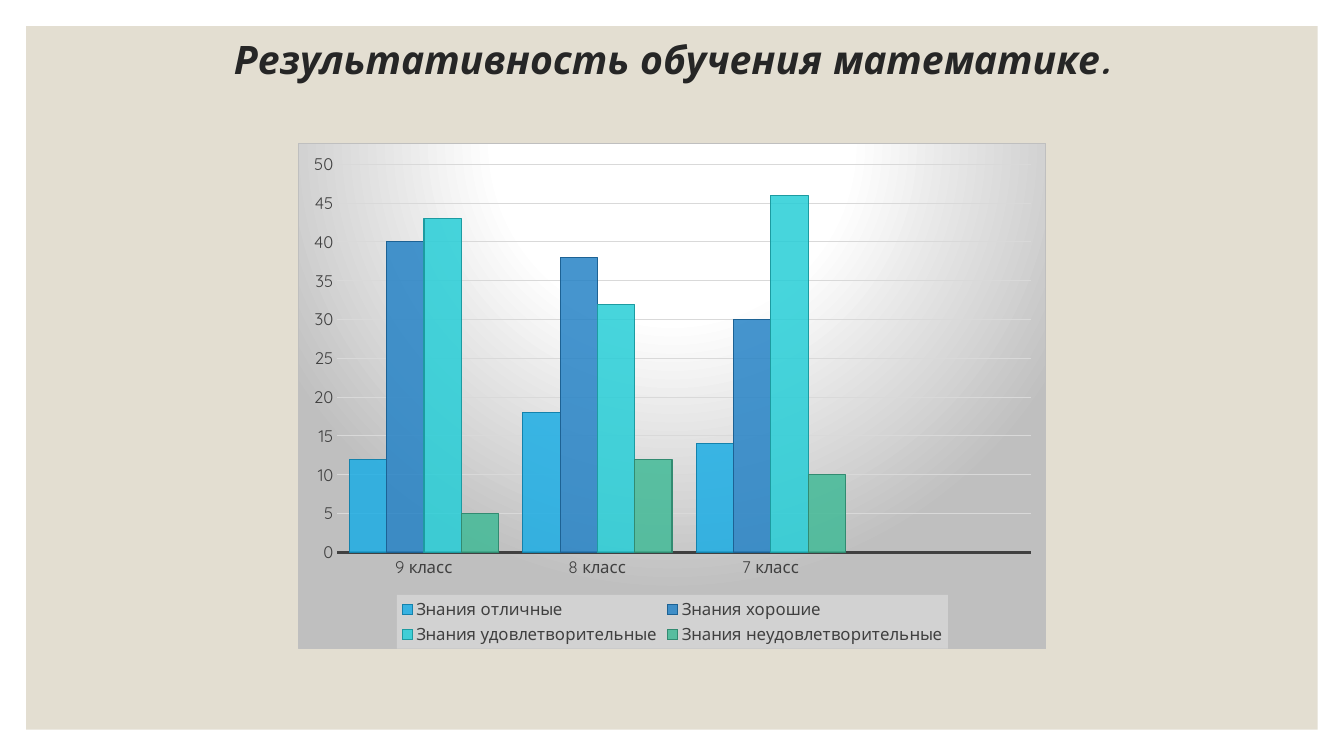
import pptx
import pptx.chart.data
import pptx.dml.color
import pptx.enum.chart
import pptx.enum.shapes
import pptx.enum.text
import pptx.oxml
import pptx.oxml.ns
import pptx.util

Cm = pptx.util.Cm
Pt = pptx.util.Pt

FONT = "Quicksand"
COLORS = {
    "panel": "E3DED1",
    "title": "262626",
    "label": "404040",
    "grid": "D9D9D9",
    "frame": "BFBFBF",
    "glow": "FFFFFF",
    "legend": "F2F2F2",
}
CLASSES = ["9 класс", "8 класс", "7 класс", ""]
GRADES = [
    ("Знания отличные", (12, 18, 14, None), "1CADE4", "1482AC"),
    ("Знания хорошие", (40, 38, 30, None), "2683C6", "1D6294"),
    ("Знания удовлетворительные", (43, 32, 46, None), "27CED7", "1D9BA1"),
    ("Знания неудовлетворительные", (5, 12, 10, None), "42BA97", "328B71"),
]
TITLE_FONT = {"name": FONT, "size": Pt(28), "bold": True, "italic": True}
LABEL_FONT = {"name": FONT, "size": Pt(12), "bold": False}
TITLE_FRAME = {
    "word_wrap": True,
    "vertical_anchor": pptx.enum.text.MSO_ANCHOR.MIDDLE,
    "margin_top": 0,
    "margin_bottom": 0,
}


def rgb(code):
    """Turn a hex string into a colour."""
    return pptx.dml.color.RGBColor.from_string(code)


def apply(target, values):
    """Set each attribute in values on target."""
    for name, value in values.items():
        setattr(target, name, value)


def style_font(font, values, color):
    """Give a font its values and colour."""
    apply(font, values)
    font.color.rgb = rgb(color)


def style_line(line, color, width):
    """Give a line its colour and width in points."""
    line.color.rgb = rgb(color)
    line.width = Pt(width)


def chart_fill(content):
    """Build chart shape properties around the given XML."""
    return pptx.oxml.parse_xml(
        f'<c:spPr {pptx.oxml.ns.nsdecls("c", "a")}>{content}</c:spPr>'
    )


def add_panel(slide, left, top, width, height):
    """Draw the plain panel behind the content."""
    panel = slide.shapes.add_shape(
        pptx.enum.shapes.MSO_SHAPE.RECTANGLE, left, top, width, height
    )
    panel.shadow.inherit = False
    panel.fill.solid()
    panel.fill.fore_color.rgb = rgb(COLORS["panel"])
    panel.line.fill.background()


def add_title(slide, left, top, width, height):
    """Write the heading in the middle of its box."""
    frame = slide.shapes.add_textbox(left, top, width, height).text_frame
    apply(frame, TITLE_FRAME)
    heading = frame.paragraphs[0]
    apply(heading, {"alignment": pptx.enum.text.PP_ALIGN.CENTER, "line_spacing": 0.9})
    run = heading.add_run()
    run.text = "Результативность обучения математике."
    style_font(run.font, TITLE_FONT, COLORS["title"])


def style_axes(chart):
    """Format the class axis and the score axis."""
    none = pptx.enum.chart.XL_TICK_MARK.NONE
    for axis in (chart.category_axis, chart.value_axis):
        apply(axis, {"major_tick_mark": none, "minor_tick_mark": none})
        style_font(axis.tick_labels.font, LABEL_FONT, COLORS["label"])
    style_line(chart.category_axis.format.line, COLORS["label"], 1.5)
    scores = chart.value_axis
    apply(scores, {"minimum_scale": 0, "maximum_scale": 50, "major_unit": 5})
    scores.format.line.fill.background()
    style_line(scores.major_gridlines.format.line, COLORS["grid"], 0.75)


def style_legend(chart):
    """Put the legend below the columns on a pale ground."""
    chart.has_legend = True
    position = pptx.enum.chart.XL_LEGEND_POSITION.BOTTOM
    apply(chart.legend, {"position": position, "include_in_layout": False})
    style_font(chart.legend.font, LABEL_FONT, COLORS["label"])
    ground = chart_fill(
        f'<a:solidFill><a:srgbClr val="{COLORS["legend"]}">'
        '<a:alpha val="39000"/></a:srgbClr></a:solidFill>'
    )
    chart.element.xpath(".//c:legend/c:txPr")[0].addprevious(ground)


def style_ground(chart):
    """Fill the chart area with a round gradient and frame it."""
    glow, frame = COLORS["glow"], COLORS["frame"]
    stops = "".join(
        f'<a:gs pos="{place * 1000}"><a:srgbClr val="{color}"/></a:gs>'
        for place, color in ((0, glow), (39, glow), (100, frame))
    )
    ground = chart_fill(
        f'<a:gradFill><a:gsLst>{stops}</a:gsLst><a:path path="circle">'
        '<a:fillToRect l="50000" t="-80000" r="50000" b="180000"/></a:path></a:gradFill>'
        f'<a:ln w="{Pt(0.75)}"><a:solidFill><a:srgbClr val="{frame}"/></a:solidFill></a:ln>'
    )
    chart.element.xpath("./c:txPr")[0].addprevious(ground)


def add_results(slide, left, top, width, height):
    """Chart the share of each grade by class."""
    results = pptx.chart.data.CategoryChartData()
    results.categories = CLASSES
    for name, values, _, _ in GRADES:
        results.add_series(name, values)
    chart = slide.shapes.add_chart(
        pptx.enum.chart.XL_CHART_TYPE.COLUMN_CLUSTERED, left, top, width, height, results
    ).chart
    chart.has_title = False
    style_font(chart.font, {"name": FONT, "size": Pt(10)}, "000000")
    columns = chart.plots[0]
    apply(columns, {"gap_width": 65, "overlap": 0, "vary_by_categories": False})
    for series, (_, _, fill, edge) in zip(columns.series, GRADES):
        series.format.fill.solid()
        series.format.fill.fore_color.rgb = rgb(fill)
        style_line(series.format.line, edge, 0.75)
    for color in chart.element.xpath(".//c:ser/c:spPr/a:solidFill/a:srgbClr"):
        color.append(
            pptx.oxml.parse_xml(f'<a:alpha {pptx.oxml.ns.nsdecls("a")} val="85000"/>')
        )
    style_axes(chart)
    style_legend(chart)
    style_ground(chart)


def build_slide(deck, left, top, width, height):
    """Lay out the panel, heading and chart in the given box."""
    slide = deck.slides.add_slide(deck.slide_layouts[6])
    add_panel(slide, left, top, width, height)
    add_title(slide, left + Cm(2.31), top, width - Cm(4.62), Cm(1.8))
    add_results(slide, left + Cm(6.86), top + Cm(2.95), Cm(18.85), Cm(12.75))


def main():
    """Build and save the presentation."""
    deck = pptx.Presentation()
    apply(deck, {"slide_width": Cm(33.87), "slide_height": Cm(19.05)})
    margin = Cm(0.66)
    build_slide(
        deck, margin, margin, deck.slide_width - 2 * margin, deck.slide_height - 2 * margin
    )
    deck.save("out.pptx")


if __name__ == "__main__":
    main()
